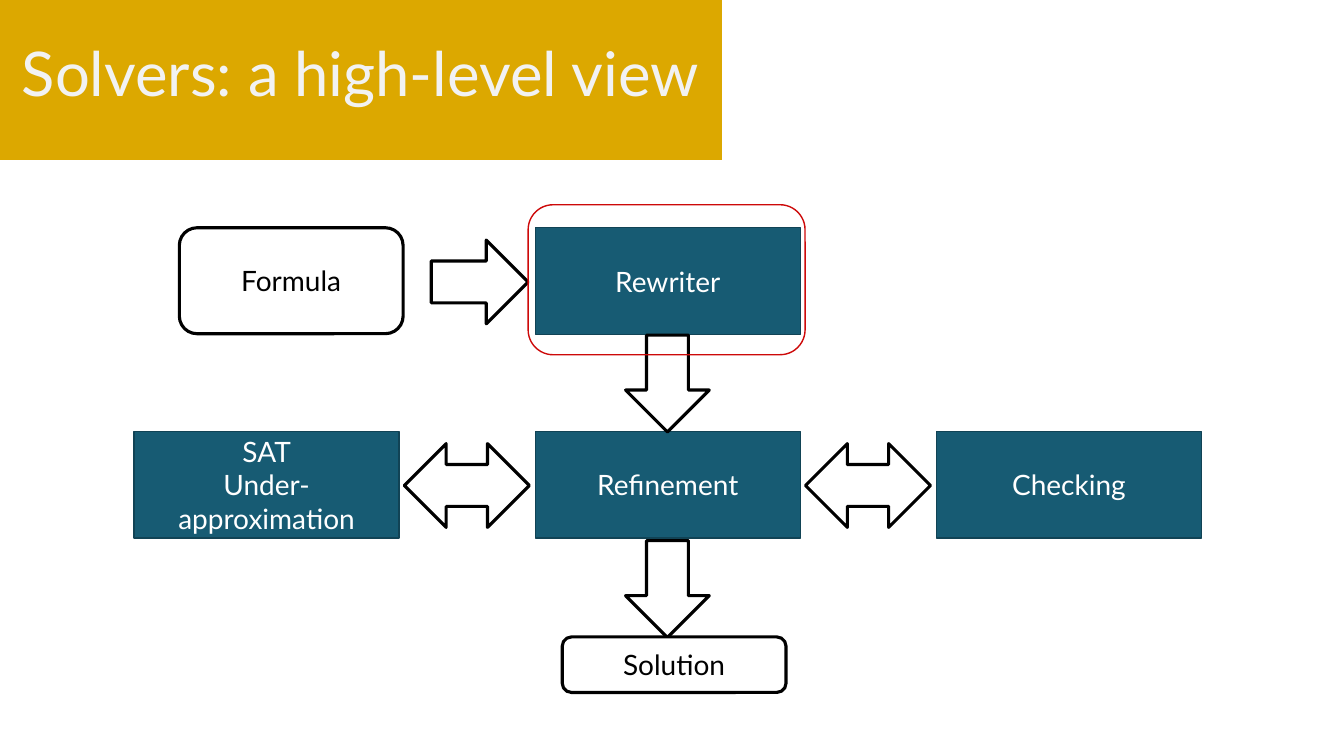
from pptx import Presentation
from pptx.dml.color import RGBColor
from pptx.enum.shapes import MSO_SHAPE as SHAPE
from pptx.enum.text import MSO_ANCHOR as ANCHOR, PP_ALIGN as ALIGN
from pptx.util import Cm, Pt


def color(value):
    return RGBColor.from_string(value)


def add_shape(kind, left, top, width, height, style, text="", rotation=0):
    fill, line, weight, ink, size, align = style
    sp = s.shapes.add_shape(kind, Cm(left), Cm(top), Cm(width), Cm(height))
    sp.shadow.inherit = False
    sp.rotation = rotation
    if fill:
        sp.fill.solid()
        sp.fill.fore_color.rgb = color(fill)
    else:
        sp.fill.background()
    if line:
        sp.line.color.rgb = color(line)
        sp.line.width = Pt(weight)
    else:
        sp.line.fill.background()
    if text:
        tf = sp.text_frame
        tf.word_wrap = True
        tf.vertical_anchor = ANCHOR.MIDDLE
        p = tf.paragraphs[0]
        p.text = text
        p.alignment = align
        p.line_spacing = 0.9 if size == 44 else 1.0
        for r in p.runs:
            for name, value in {"name": "Lato", "size": Pt(size)}.items():
                setattr(r.font, name, value)
            r.font.color.rgb = color(ink)


prs = Presentation()
prs.slide_width, prs.slide_height = Cm(33.87), Cm(19.05)
s = prs.slides.add_slide(prs.slide_layouts[6])

BANNER = ("DCA800", "FFFFFF", 1.5, None, None, None)
TITLE = (None, None, 0, "F2F2F2", 44, ALIGN.LEFT)
STAGE = ("175B73", "114355", 1, "FFFFFF", 20, ALIGN.CENTER)
OUTLINE = ("FFFFFF", "000000", 2.25, "000000", 20, ALIGN.CENTER)
HIGHLIGHT = (None, "CD0909", 1, None, None, None)

add_shape(SHAPE.FLOWCHART_PROCESS, -0.03, -0.05, 18.26, 4.11, BANNER)
add_shape(SHAPE.RECTANGLE, 0.3, 0.08, 17.91, 3.68, TITLE, "Solvers: a high-level view")

stages = [
    (1, 0, "Rewriter"),
    (1, 1, "Refinement"),
    (0, 1, "SAT\nUnder-approximation"),
    (2, 1, "Checking"),
]
for col, row, text in stages:
    add_shape(SHAPE.RECTANGLE, 3.38 + 10.11 * col, 5.74 + 5.13 * row, 6.68, 2.69, STAGE, text)

for left, top, rotation in [(15.6, 8.61, 90), (15.6, 13.79, 90), (10.87, 6.05, 0)]:
    add_shape(SHAPE.RIGHT_ARROW, left, top, 2.44, 2.11, OUTLINE, rotation=rotation)
for left in (10.19, 20.3):
    add_shape(SHAPE.LEFT_RIGHT_ARROW, left, 11.18, 3.15, 2.11, OUTLINE)

for left, top, height, text in [(4.52, 5.74, 2.67, "Formula"), (14.17, 16.05, 1.4, "Solution")]:
    add_shape(SHAPE.ROUNDED_RECTANGLE, left, top, 5.64, height, OUTLINE, text)
add_shape(SHAPE.ROUNDED_RECTANGLE, 13.31, 5.16, 6.98, 3.78, HIGHLIGHT)

prs.save("out.pptx")
